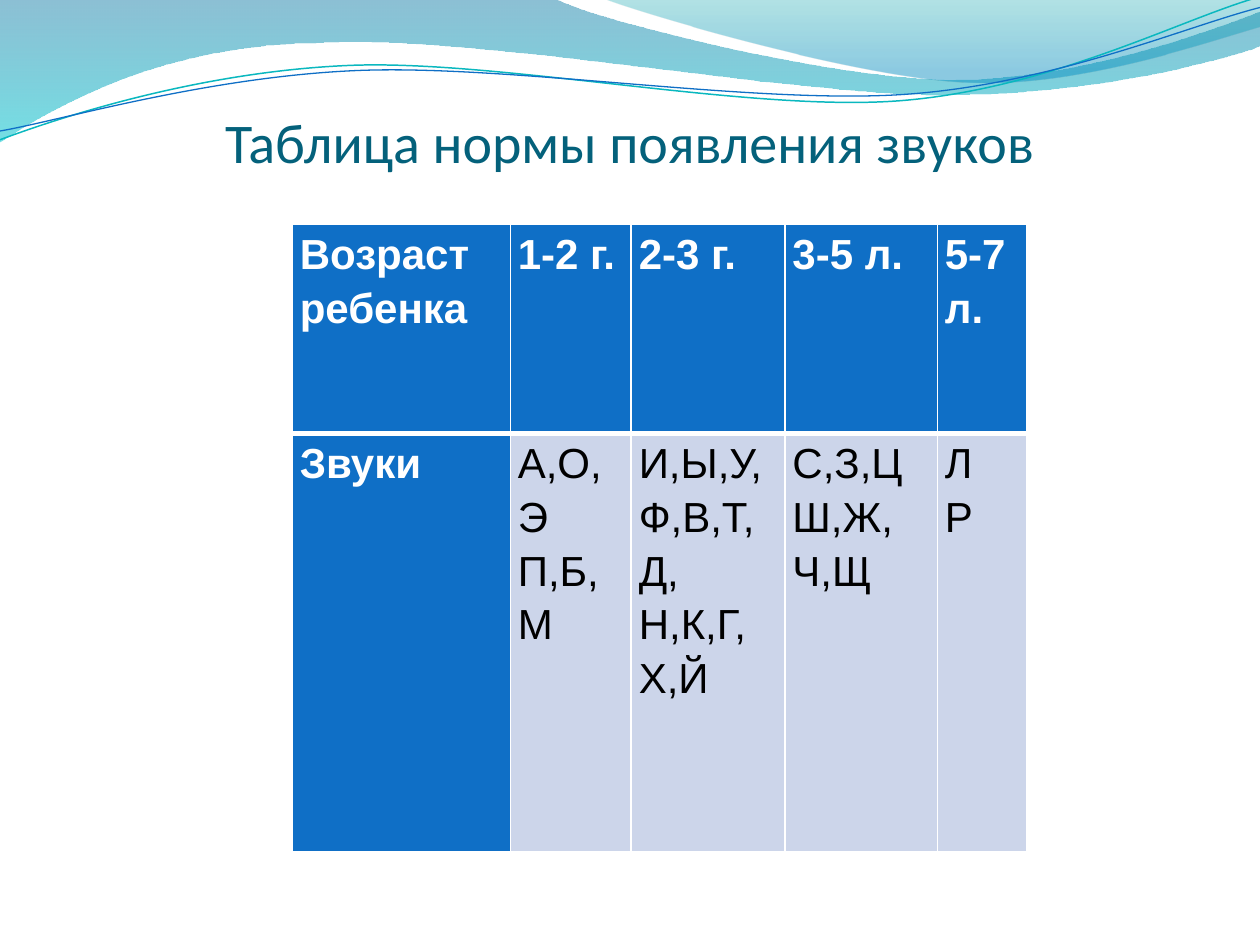
import math
import pptx
import pptx.util
import pptx.oxml
import pptx.oxml.ns
import pptx.dml.color
import pptx.enum.text

RGB = pptx.dml.color.RGBColor
WHITE = RGB(0xFF, 0xFF, 0xFF)
BLACK = RGB(0, 0, 0)
BLUE = RGB(0x0F, 0x6F, 0xC6)
PALE = RGB(0xCC, 0xD5, 0xEA)
TEAL = RGB(0x04, 0x61, 0x7B)
AQUA = RGB(0x0A, 0xB8, 0xBF)
SEA = RGB(0x00, 0x74, 0xA1)
CYAN = RGB(0x00, 0xC6, 0xCF)
JADE = RGB(0x00, 0xA1, 0xA9)
SKY = RGB(0x00, 0x8B, 0xBF)
NS = pptx.oxml.ns.nsdecls("a")
UNIT = 1000  # drawing units per grid step; the slide is 10 x 7.5 steps
TILT = 2.7  # degrees that the thin curves lean to the left

deck = pptx.Presentation()
deck.slide_width = pptx.util.Inches(10)
deck.slide_height = pptx.util.Inches(7.5)
step = deck.slide_width / 10
slide = deck.slides.add_slide(deck.slide_layouts[5])
shapes = slide.shapes


def grid(*sizes):
    return [round(size * step) for size in sizes]


def trace(start, parts, close):
    """Draw an outline; a part is a line end or the last three points of a Bezier curve."""
    dots = [start] + [part[i:i + 2] for part in parts for i in range(0, len(part), 2)]
    dots = [(x * UNIT, y * UNIT) for x, y in dots]
    pen = shapes.build_freeform(*dots[0], scale=step / UNIT)
    pen.add_line_segments(dots[1:], close=close)
    shape = pen.convert_to_shape()
    shape.shadow.inherit = False
    lines = iter(list(shape.element.spPr.iter(pptx.oxml.ns.qn("a:lnTo"))))
    for part in parts:
        group = [next(lines) for i in range(len(part) // 2)]
        if len(group) == 3:
            bend = pptx.oxml.parse_xml(f"<a:cubicBezTo {NS}/>")
            group[0].addprevious(bend)
            for line in group:
                bend.append(line[0])
                line.getparent().remove(line)
    return shape


# Waves along the top
waves = [
    ((0, -0.01),
     [(4.4, -0.01), (4.76, 0.17, 6.64, 0.63, 7.58, 0.63),
      (8.53, 0.63, 9.58, 0.26, 10, 0.09), (10.01, 0.36),
      (9.83, 0.44, 8.7, 0.76, 7.46, 0.75), (6.22, 0.75, 3.82, 0.28, 2.57, 0.34),
      (1.29, 0.35, 0.46, 0.83, -0.01, 1.13)],
     [(0, SEA, 45), (100, CYAN, 55)]),
    ((4.79, -0.01),
     [(5.09, 0.11, 6.82, 0.62, 7.69, 0.65), (8.56, 0.69, 9.61, 0.32, 10, 0.21), (10, 0)],
     [(0, JADE, 30), (80, SKY, 45)]),
]
for start, parts, stops in waves:
    wave = trace(start, parts, True)
    wave.line.fill.background()
    marks = "".join(
        f'<a:gs pos="{pos * 1000}"><a:srgbClr val="{color}">'
        f'<a:alpha val="{alpha * 1000}"/></a:srgbClr></a:gs>'
        for pos, color, alpha in stops)
    fade = pptx.oxml.parse_xml(
        f'<a:gradFill {NS} rotWithShape="1"><a:gsLst>{marks}</a:gsLst>'
        '<a:lin ang="5400000" scaled="0"/></a:gradFill>')
    wave.fill.background()
    blank = wave.element.spPr.find(pptx.oxml.ns.qn("a:noFill"))
    blank.getparent().replace(blank, fade)

# Thin curves: level the points about the middle, then lean the whole shape
curves = [
    ([(0, 1.11), (0.48, 0.93), (1.58, 0.57), (2.77, 0.52), (3.95, 0.47), (5.93, 0.89),
      (7.13, 0.8), (8.33, 0.71), (9.38, 0.15), (9.98, -0.02)], (4.99, 0.57), AQUA, 0.85),
    ([(0, 1.04), (0.47, 0.96), (1.64, 0.61), (2.83, 0.56), (4.03, 0.51), (5.97, 0.83),
      (7.17, 0.75), (8.36, 0.67), (9.41, 0.21), (10, 0.06)], (5, 0.59), BLUE, 0.75),
]
cos, sin = math.cos(math.radians(TILT)), math.sin(math.radians(TILT))
for dots, (midx, midy), color, width in curves:
    flat = [(midx + (x - midx) * cos - (y - midy) * sin,
             midy + (x - midx) * sin + (y - midy) * cos) for x, y in dots]
    parts = [sum(flat[i:i + 3], ()) for i in range(1, len(flat), 3)]
    curve = trace(flat[0], parts, False)
    curve.rotation = 360 - TILT
    curve.fill.background()
    curve.line.color.rgb = color
    curve.line.width = pptx.util.Pt(width)

# Title, in front of the waves
title = shapes.title
title.element.getparent().append(title.element)
title.left, title.top, title.width, title.height = grid(0.5, 0.77, 9, 0.62)
frame = title.text_frame
frame.text = "Таблица нормы появления звуков"
frame.word_wrap = True
frame.auto_size = pptx.enum.text.MSO_AUTO_SIZE.NONE
frame.vertical_anchor = pptx.enum.text.MSO_ANCHOR.BOTTOM
frame.margin_left, frame.margin_top, frame.margin_right, frame.margin_bottom = grid(0, 0.05, 0, 0)
para = frame.paragraphs[0]
para.alignment = pptx.enum.text.PP_ALIGN.CENTER
font = para.runs[0].font
font.name, font.size, font.color.rgb = "Calibri", pptx.util.Pt(32), TEAL

# Table of sounds by age
rows = [
    ["Возраст ребенка", "1-2 г.", "2-3 г.", "3-5 л.", "5-7 л."],
    ["Звуки", "А,О,Э\nП,Б,М", "И,Ы,У,\nФ,В,Т,\nД,\nН,К,Г,\nХ,Й",
     "С,З,Ц\vШ,Ж,\nЧ,Щ", "Л\vР"],
]
widths = grid(1.73, 0.96, 1.22, 1.21, 0.71)
heights = grid(1.66, 3.32)
table = shapes.add_table(
    len(rows), len(widths), *grid(2.32, 1.78), sum(widths), sum(heights)).table
for col, width in zip(table.columns, widths):
    col.width = width
for row, height in zip(table.rows, heights):
    row.height = height

for r, row in enumerate(rows):
    for c, text in enumerate(row):
        cell = table.cell(r, c)
        head = r == 0 or c == 0
        thick = "B" if r == 0 else "T"
        for side in "LRTB":
            size = pptx.util.Pt(3 if side == thick else 1)
            cell._tc.get_or_add_tcPr().append(pptx.oxml.parse_xml(
                f'<a:ln{side} {NS} w="{size}"><a:solidFill><a:srgbClr val="{WHITE}"/>'
                f'</a:solidFill></a:ln{side}>'))
        cell.fill.solid()
        cell.fill.fore_color.rgb = BLUE if head else PALE
        cell.margin_left, cell.margin_right, cell.margin_top, cell.margin_bottom = grid(
            0.06, 0.06, 0, 0)
        cell.text_frame.text = text
        for para in cell.text_frame.paragraphs:
            para.line_spacing = 1.15
            for run in para.runs:
                font = run.font
                font.name, font.size, font.bold = "Arial", pptx.util.Pt(24), head
                font.color.rgb = WHITE if head else BLACK

deck.save("out.pptx")
